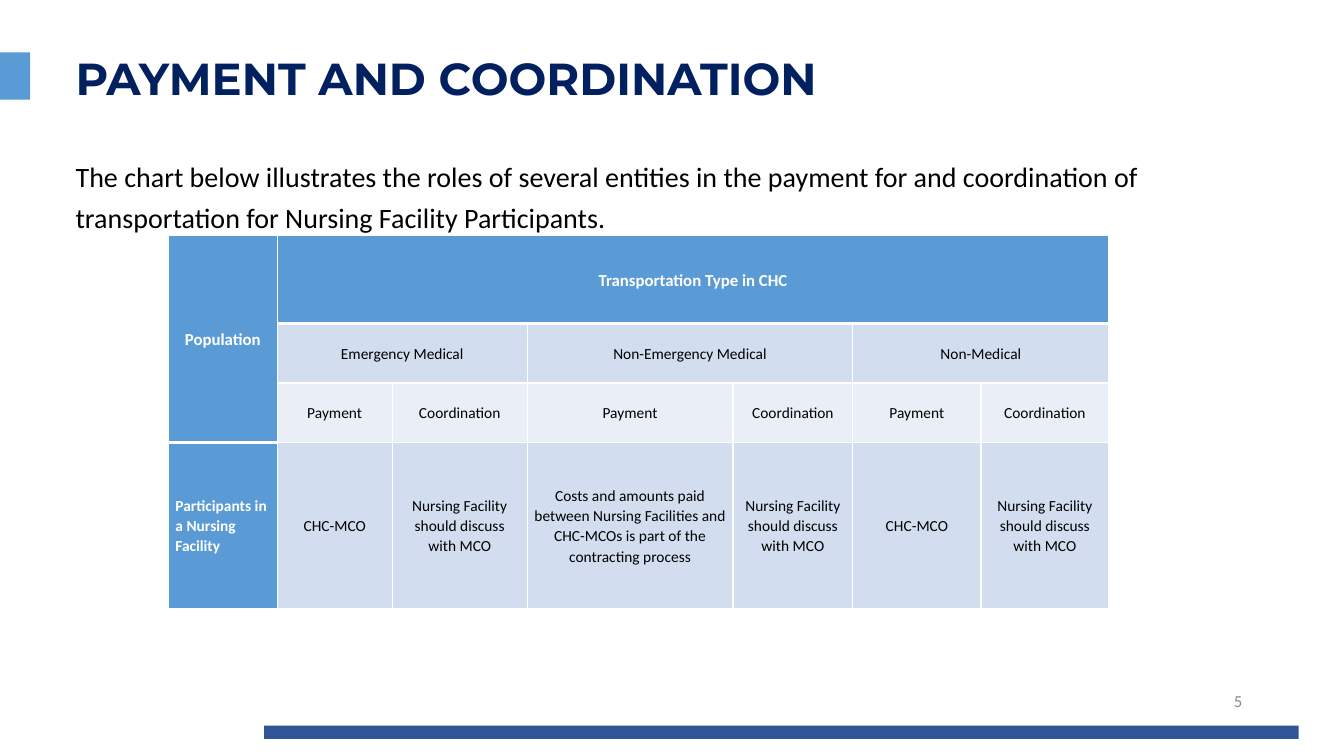
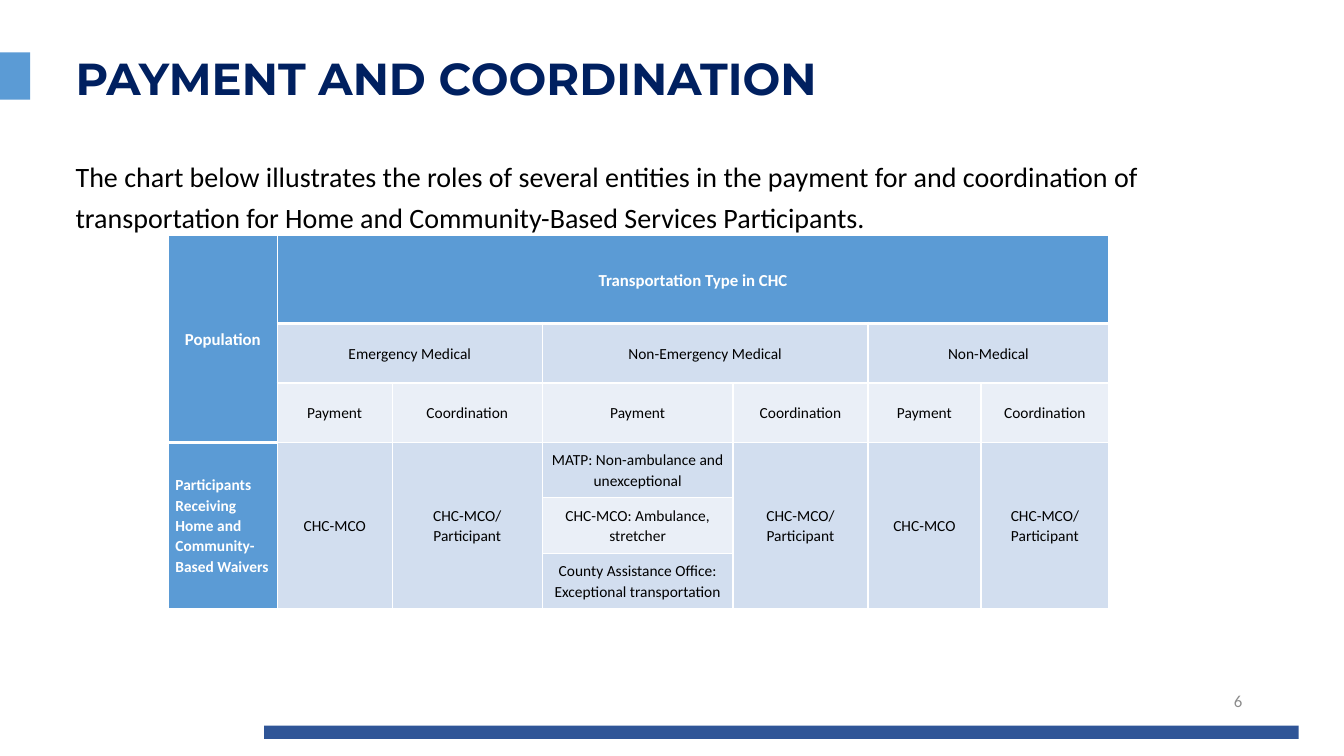
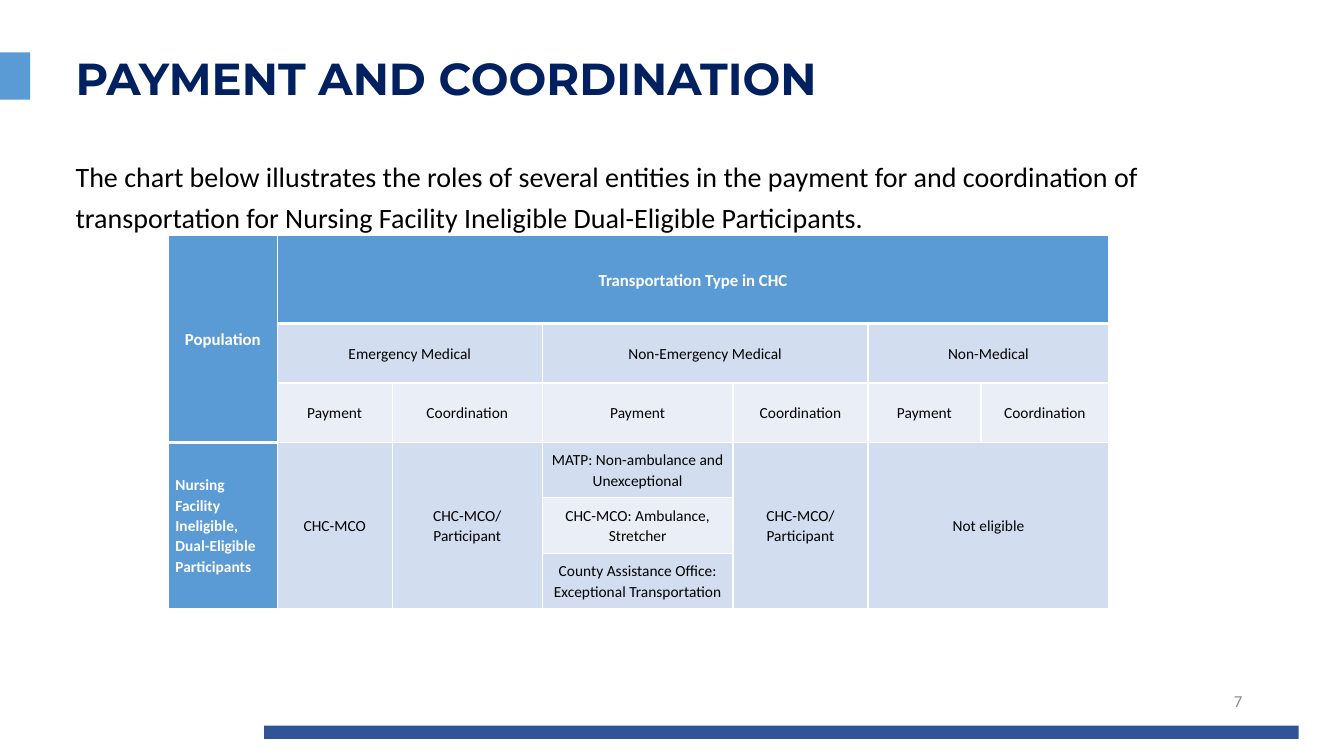
from lxml.etree import SubElement
from pptx import Presentation
from pptx.dml.color import RGBColor
from pptx.enum.shapes import MSO_SHAPE
from pptx.enum.text import MSO_ANCHOR, MSO_AUTO_SIZE, PP_ALIGN
from pptx.oxml.ns import qn
from pptx.util import Inches, Pt

NAVY = RGBColor(0x00, 0x20, 0x60)
BLUE = RGBColor(0x5B, 0x9B, 0xD5)
DARK_BLUE = RGBColor(0x2F, 0x55, 0x97)
LIGHT_BLUE = RGBColor(0xD2, 0xDE, 0xEF)
PALE_BLUE = RGBColor(0xEA, 0xEF, 0xF7)
GRAY = RGBColor(0x8C, 0x8C, 0x8C)
BLACK = RGBColor(0x00, 0x00, 0x00)
WHITE = RGBColor(0xFF, 0xFF, 0xFF)

TITLE_FONT = "Montserrat"
BODY_FONT = "Calibri"
TITLE = "PAYMENT AND COORDINATION"
INTRODUCTION = (
    "The chart below illustrates the roles of several entities in the payment "
    "for and coordination of transportation for {}."
)

TITLE_BOX = (0.65, 0.49, 11.03, 0.8)
INTRODUCTION_BOX = (0.65, 1.47, 11.26, 0.85)
NUMBER_BOX = (9.42, 6.75, 3, 0.4)
ACCENT_BOX = (0, 0.52, 0.3, 0.47)
FOOTER_BOX = (2.62, 7.2, 10.26, 0.13)
TABLE_BOX = (1.67, 2.34, 9.32, 3.69)

HEADER_HEIGHTS = [0.87, 0.59, 0.59]
FACILITY_WIDTHS = [1.08, 1.14, 1.34, 2.04, 1.19, 1.27, 1.27]
COMMUNITY_WIDTHS = [1.08, 1.14, 1.49, 1.89, 1.34, 1.12, 1.27]
SINGLE_ROW = [1.65]
SPLIT_ROWS = [0.55] * 3

HEADER_CELLS = [
    (0, 0, 3, 1, "Population"),
    (0, 1, 1, 6, "Transportation Type in CHC"),
    (1, 1, 1, 2, "Emergency Medical"),
    (1, 3, 1, 2, "Non-Emergency Medical"),
    (1, 5, 1, 2, "Non-Medical"),
] + [
    (2, column, 1, 1, "Payment" if column % 2 else "Coordination")
    for column in range(1, 7)
]


def facility_cells():
    discuss = "Nursing Facility should discuss with MCO"
    costs = (
        "Costs and amounts paid between Nursing Facilities and CHC-MCOs "
        "is part of the contracting process"
    )
    texts = ["Participants in a Nursing Facility", "CHC-MCO", discuss, costs,
             discuss, "CHC-MCO", discuss]
    return [(3, column, 1, 1, text) for column, text in enumerate(texts)]


def community_cells(population, payers, non_medical):
    shared = "CHC-MCO/Participant"
    spanning = [(0, population), (1, "CHC-MCO"), (2, shared), (4, shared)]
    cells = [(3, column, 3, 1, text) for column, text in spanning]
    cells += [(row, 3, 1, 1, text) for row, text in enumerate(payers, start=3)]
    return cells + non_medical


SLIDES = [
    ("Nursing Facility Participants", FACILITY_WIDTHS, SINGLE_ROW, facility_cells()),
    (
        "Home and Community-Based Services Participants",
        COMMUNITY_WIDTHS,
        SPLIT_ROWS,
        community_cells(
            "Participants Receiving Home and Community-Based Waivers",
            ["MATP: Non-ambulance and unexceptional",
             "CHC-MCO: Ambulance, stretcher",
             "County Assistance Office: Exceptional transportation"],
            [(3, 5, 3, 1, "CHC-MCO"), (3, 6, 3, 1, "CHC-MCO/Participant")],
        ),
    ),
    (
        "Nursing Facility Ineligible Dual-Eligible Participants",
        COMMUNITY_WIDTHS,
        SPLIT_ROWS,
        community_cells(
            "Nursing Facility Ineligible, Dual-Eligible Participants",
            ["MATP: Non-ambulance and Unexceptional",
             "CHC-MCO: Ambulance, Stretcher",
             "County Assistance Office: Exceptional Transportation"],
            [(3, 5, 3, 2, "Not eligible")],
        ),
    ),
]


def place(shape, box):
    shape.left, shape.top, shape.width, shape.height = map(Inches, box)


def format_paragraph(paragraph, font_name, size, color, bold=False,
                     alignment=PP_ALIGN.LEFT, line_spacing=1.0):
    paragraph.alignment = alignment
    paragraph.line_spacing = line_spacing
    paragraph.space_before = Pt(0)
    for run in paragraph.runs:
        run.font.name = font_name
        run.font.size = Pt(size)
        run.font.bold = bold
        run.font.color.rgb = color


def write_text(shape, box, text, anchor=MSO_ANCHOR.TOP):
    place(shape, box)
    frame = shape.text_frame
    frame.text = text
    frame.word_wrap = True
    frame.auto_size = MSO_AUTO_SIZE.NONE
    frame.vertical_anchor = anchor
    return frame.paragraphs[0]


def add_bar(slide, box, color):
    bar = slide.shapes.add_shape(MSO_SHAPE.RECTANGLE, *map(Inches, box))
    bar.shadow.inherit = False
    bar.fill.solid()
    bar.fill.fore_color.rgb = color
    bar.line.fill.background()


def add_frame(slide, number):
    add_bar(slide, FOOTER_BOX, DARK_BLUE)
    add_bar(slide, ACCENT_BOX, BLUE)
    title = write_text(slide.shapes.title, TITLE_BOX, TITLE)
    format_paragraph(title, TITLE_FONT, 32, NAVY, bold=True, line_spacing=Pt(36))
    number_box = slide.shapes.add_textbox(*map(Inches, NUMBER_BOX))
    label = write_text(number_box, NUMBER_BOX, str(number), MSO_ANCHOR.MIDDLE)
    format_paragraph(label, BODY_FONT, 12, GRAY, alignment=PP_ALIGN.RIGHT)


def add_introduction(slide, box, participants):
    paragraph = write_text(slide.placeholders[1], box, INTRODUCTION.format(participants))
    properties = paragraph._p.get_or_add_pPr()
    properties.set("marL", "0")
    properties.set("indent", "0")
    SubElement(properties, qn("a:buNone"))
    format_paragraph(paragraph, BODY_FONT, 20, BLACK, line_spacing=1.2)


def set_borders(cell, row, column):
    thick_top = (row == 1 and column > 0) or (row == 3 and column == 0)
    thick_bottom = row == 0 or (row == 2 and column == 0)
    widths = {"L": 1, "R": 1, "T": 3 if thick_top else 1, "B": 3 if thick_bottom else 1}
    properties = cell._tc.get_or_add_tcPr()
    for side, width in widths.items():
        line = SubElement(properties, qn(f"a:ln{side}"), w=str(Pt(width)))
        fill = SubElement(line, qn("a:solidFill"))
        SubElement(fill, qn("a:srgbClr"), val=str(WHITE))


def style_cell(cell, row, column):
    is_header = row == 0 or column == 0
    set_borders(cell, row, column)
    cell.fill.solid()
    cell.fill.fore_color.rgb = (
        BLUE if is_header else PALE_BLUE if row in (2, 4) else LIGHT_BLUE
    )
    cell.vertical_anchor = MSO_ANCHOR.MIDDLE
    cell.margin_left = cell.margin_right = Inches(0.07)
    cell.margin_top = cell.margin_bottom = Inches(0)
    format_paragraph(
        cell.text_frame.paragraphs[0],
        BODY_FONT,
        12 if row == 0 else 11,
        WHITE if is_header else BLACK,
        bold=is_header,
        alignment=PP_ALIGN.LEFT if row > 0 and column == 0 else PP_ALIGN.CENTER,
        line_spacing=1.07,
    )


def add_transport_table(slide, box, widths, body_heights, body_cells):
    heights = HEADER_HEIGHTS + body_heights
    table = slide.shapes.add_table(len(heights), len(widths), *map(Inches, box)).table
    table.first_row = table.horz_banding = False
    for table_column, width in zip(table.columns, widths):
        table_column.width = Inches(width)
    for table_row, height in zip(table.rows, heights):
        table_row.height = Inches(height)
    for row, column, row_span, column_span, text in HEADER_CELLS + body_cells:
        cell = table.cell(row, column)
        cell.text_frame.text = text
        if row_span * column_span > 1:
            cell.merge(table.cell(row + row_span - 1, column + column_span - 1))
    for row in range(len(heights)):
        for column in range(len(widths)):
            style_cell(table.cell(row, column), row, column)


def main():
    presentation = Presentation()
    presentation.slide_width = Inches(13.33)
    presentation.slide_height = Inches(7.5)
    layout = presentation.slide_layouts[1]
    for number, (participants, widths, heights, cells) in enumerate(SLIDES, start=5):
        slide = presentation.slides.add_slide(layout)
        add_frame(slide, number)
        add_introduction(slide, INTRODUCTION_BOX, participants)
        add_transport_table(slide, TABLE_BOX, widths, heights, cells)
    presentation.save("out.pptx")


if __name__ == "__main__":
    main()
